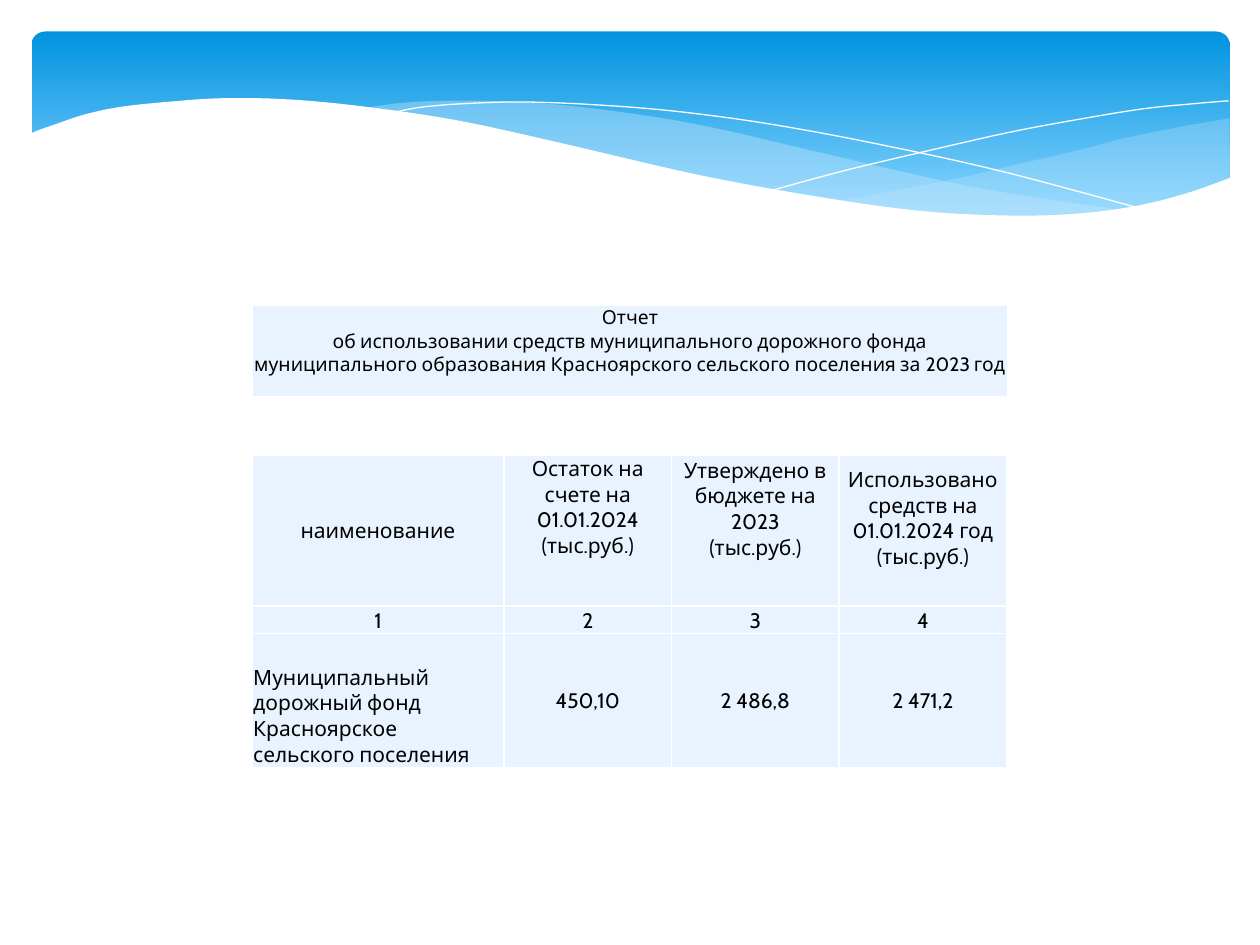
"""Build the road fund report slide."""
from lxml.etree import SubElement
from pptx import Presentation
from pptx.dml.color import RGBColor
from pptx.enum.shapes import MSO_SHAPE as Shape
from pptx.enum.text import MSO_ANCHOR as Anchor, PP_ALIGN as Align
from pptx.oxml import parse_xml
from pptx.oxml.ns import nsdecls, qn
from pptx.util import Pt

SCALE = 9144
BLUE_TOP, BLUE_BOTTOM, WAVE, CELL, WHITE, BLACK = (
    "0293E0", "83D3FE", "C6E7FC", "E8F3FF", "FFFFFF", "000000")

RIGHT_WAVE = [
    [(975, 94), (935, 101), (891, 110), (861, 118), (805, 131),
     (753, 143), (706, 152), (661, 160)],
    [(661, 160), (719, 167), (769, 171), (824, 172), (881, 167),
     (928, 158), (963, 147), (976, 141)],
    [(976, 94)]]
LEFT_WAVE = [
    [(893, 167), (837, 159), (775, 149), (706, 134), (629, 116),
     (569, 102), (514, 92), (442, 83), (380, 80), (328, 81), (286, 86)],
    [(286, 86), (342, 94), (404, 106), (449, 116), (530, 135), (601, 150),
     (665, 161), (722, 168), (773, 172), (818, 173), (857, 171), (893, 167)]]
FALLING_LINE = [
    [(309, 90), (335, 85), (374, 82), (416, 81), (469, 83), (533, 88),
     (608, 98), (695, 114), (795, 136), (907, 166)]]
RISING_LINE = [
    [(613, 151), (672, 135), (748, 117), (806, 104), (866, 93),
     (910, 86), (951, 82), (975, 80)]]
WHITE_WAVE = [
    [(977, 141), (940, 154), (899, 164), (850, 170), (793, 171),
     (726, 167), (648, 156), (555, 139), (447, 114), (365, 96), (292, 85),
     (230, 79), (177, 78), (132, 81), (95, 85), (67, 91), (46, 98),
     (29, 104), (23, 107)],
    [(23, 224)], [(977, 224)]]

TITLE = [["Отчет\nоб использовании средств муниципального дорожного фонда "
          "муниципального образования Красноярского сельского поселения за 2023 год"]]
REPORT = [
    ["наименование",
     "Остаток на счете на 01.01.2024\n(тыс.руб.)",
     "Утверждено в бюджете на 2023\n(тыс.руб.)",
     "Использовано средств на 01.01.2024 год\n(тыс.руб.)"],
    ["1", "2", "3", "4"],
    ["Муниципальный дорожный фонд Красноярское сельского поселения",
     "450,10", "2 486,8", "2 471,2"]]
REPORT_FORMATS = {
    (0, 1): {"anchor": Anchor.TOP},
    (0, 2): {"bottom": 35},
    (0, 3): {"bottom": 20},
    (2, 0): {"anchor": Anchor.BOTTOM, "align": Align.LEFT}}


def px(length):
    """Turn px into EMU."""
    return round(length * SCALE)


def color(value):
    """Turn a hex string into a colour."""
    return RGBColor.from_string(value)


def smooth(knots, steps=6):
    """Return points on a Catmull-Rom curve through the knots."""
    padded = [knots[0], *knots, knots[-1]]
    points = [knots[0]]
    for a, b, c, d in zip(padded, padded[1:], padded[2:], padded[3:]):
        for step in range(1, steps + 1):
            t = step / steps
            points.append(tuple(
                (2 * q + (r - p) * t + (2 * p - 5 * q + 4 * r - s) * t ** 2
                 + (3 * q - p - 3 * r + s) * t ** 3) / 2
                for p, q, r, s in zip(a, b, c, d)))
    return points


def write(cell, text, size=12, align=Align.CENTER, anchor=Anchor.MIDDLE, bottom=0):
    """Write formatted text into a table cell."""
    cell.text = text
    cell.vertical_anchor = anchor
    cell.margin_left = cell.margin_right = cell.margin_top = px(1)
    cell.margin_bottom = px(bottom)
    for paragraph in cell.text_frame.paragraphs:
        paragraph.alignment = align
        font = paragraph.runs[0].font
        font.name, font.size, font.bold = "Cabin", Pt(size), False
        font.color.rgb = color(BLACK)


class SlideBuilder:
    """Hold the style and the current slide."""

    def __init__(self, slide, border=WHITE, cell_fill=CELL):
        """Keep the slide and its table colours."""
        self.slide, self.border, self.cell_fill = slide, border, cell_fill

    def banner(self, left, top, width, height):
        """Add the rounded gradient banner."""
        shape = self.slide.shapes.add_shape(
            Shape.ROUNDED_RECTANGLE, *map(px, (left, top, width, height)))
        shape.adjustments[0] = 0.07
        shape.shadow.inherit = False
        shape.line.fill.background()
        shape.fill.gradient()
        shape.fill.gradient_angle = 270
        stops = zip(shape.fill.gradient_stops, (BLUE_TOP, BLUE_BOTTOM), (0, 0.9))
        for stop, value, position in stops:
            stop.color.rgb, stop.position = color(value), position

    def curve(self, sections, fill=None, opacity=100):
        """Add a filled wave, or an open white line when there is no fill."""
        points = [(px(x), px(y)) for knots in sections for x, y in smooth(knots)]
        builder = self.slide.shapes.build_freeform(*points[0])
        builder.add_line_segments(points[1:], close=fill is not None)
        shape = builder.convert_to_shape()
        shape.shadow.inherit = False
        if fill is None:
            shape.fill.background()
            shape.line.color.rgb = color(WHITE)
            shape.line.width = Pt(0)
            return
        shape.line.fill.background()
        shape.fill.solid()
        shape.fill.fore_color.rgb = color(fill)
        if opacity < 100:
            value = shape.fill._xPr.find(".//" + qn("a:srgbClr"))
            SubElement(value, qn("a:alpha")).set("val", str(opacity * 1000))

    def outline(self, cell):
        """Draw the four borders of a cell."""
        properties = cell._tc.get_or_add_tcPr()
        for index, side in enumerate("LRTB"):
            properties.insert(index, parse_xml(
                f'<a:ln{side} {nsdecls("a")} w="12700"><a:solidFill>'
                f'<a:srgbClr val="{self.border}"/></a:solidFill></a:ln{side}>'))

    def table(self, left, top, widths, heights, rows, formats, size=12):
        """Add a table with per-cell format overrides."""
        table = self.slide.shapes.add_table(
            len(heights), len(widths), *map(px, (left, top, sum(widths), sum(heights)))).table
        table.first_row = table.horz_banding = False
        for column, width in zip(table.columns, widths):
            column.width = px(width)
        for row, height in zip(table.rows, heights):
            row.height = px(height)
        for row, texts in enumerate(rows):
            for column, text in enumerate(texts):
                cell = table.cell(row, column)
                write(cell, text, size=size, **formats.get((row, column), {}))
                cell.fill.solid()
                cell.fill.fore_color.rgb = color(self.cell_fill)
                self.outline(cell)


def main():
    """Build and save the slide."""
    presentation = Presentation()
    presentation.slide_width, presentation.slide_height = px(1000), px(750)
    builder = SlideBuilder(presentation.slides.add_slide(presentation.slide_layouts[6]))
    builder.banner(25, 25, 951, 156)
    builder.curve(RIGHT_WAVE, WAVE, 29)
    builder.curve(LEFT_WAVE, WAVE, 40)
    builder.curve(FALLING_LINE)
    builder.curve(RISING_LINE)
    builder.curve(WHITE_WAVE, WHITE)
    builder.table(200, 361, [200] + [133] * 3, [120, 22, 106], REPORT, REPORT_FORMATS)
    builder.table(200, 242, [600], [73], TITLE,
                  {(0, 0): {"anchor": Anchor.BOTTOM, "bottom": 16}}, size=11)
    presentation.save("out.pptx")


if __name__ == "__main__":
    main()
